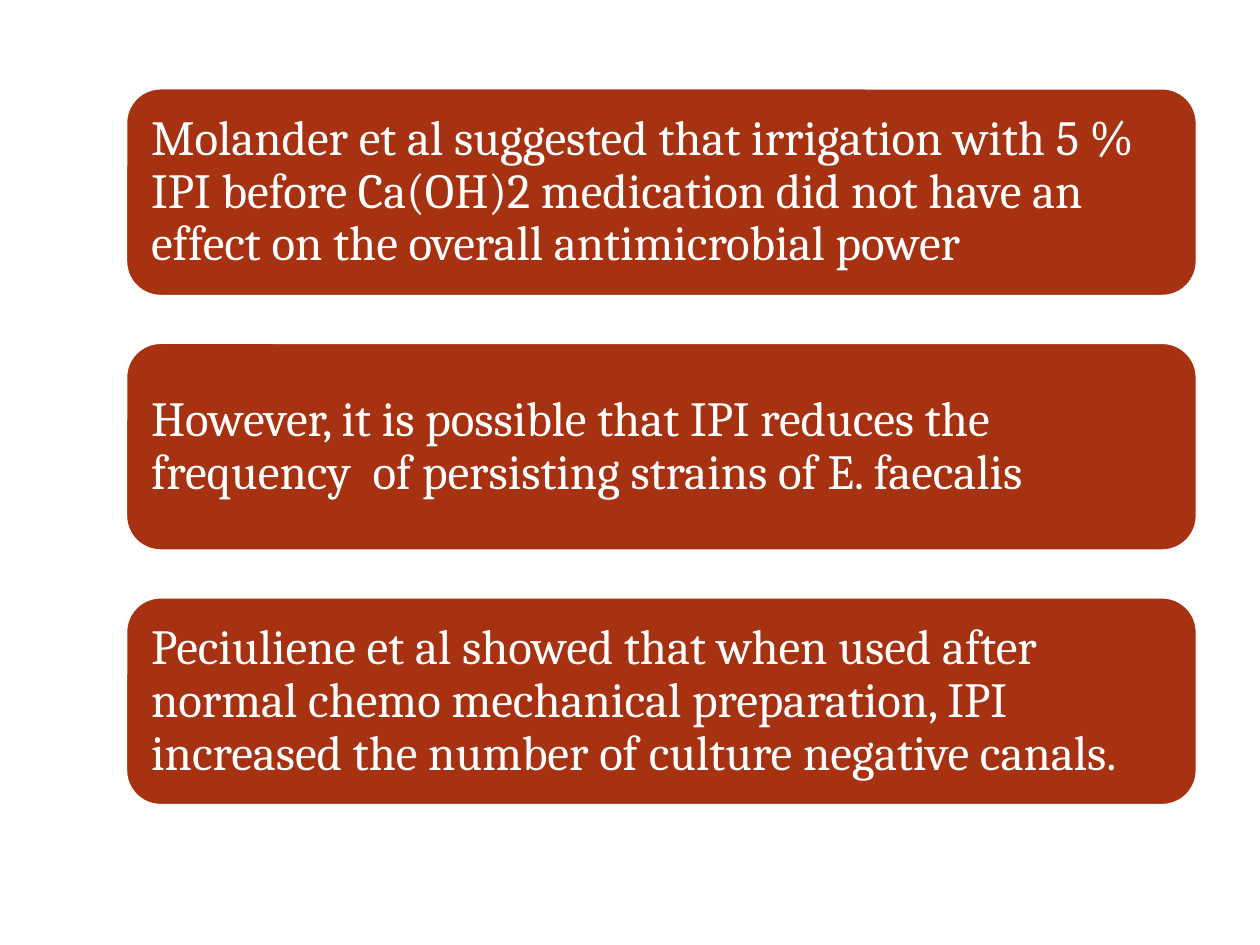
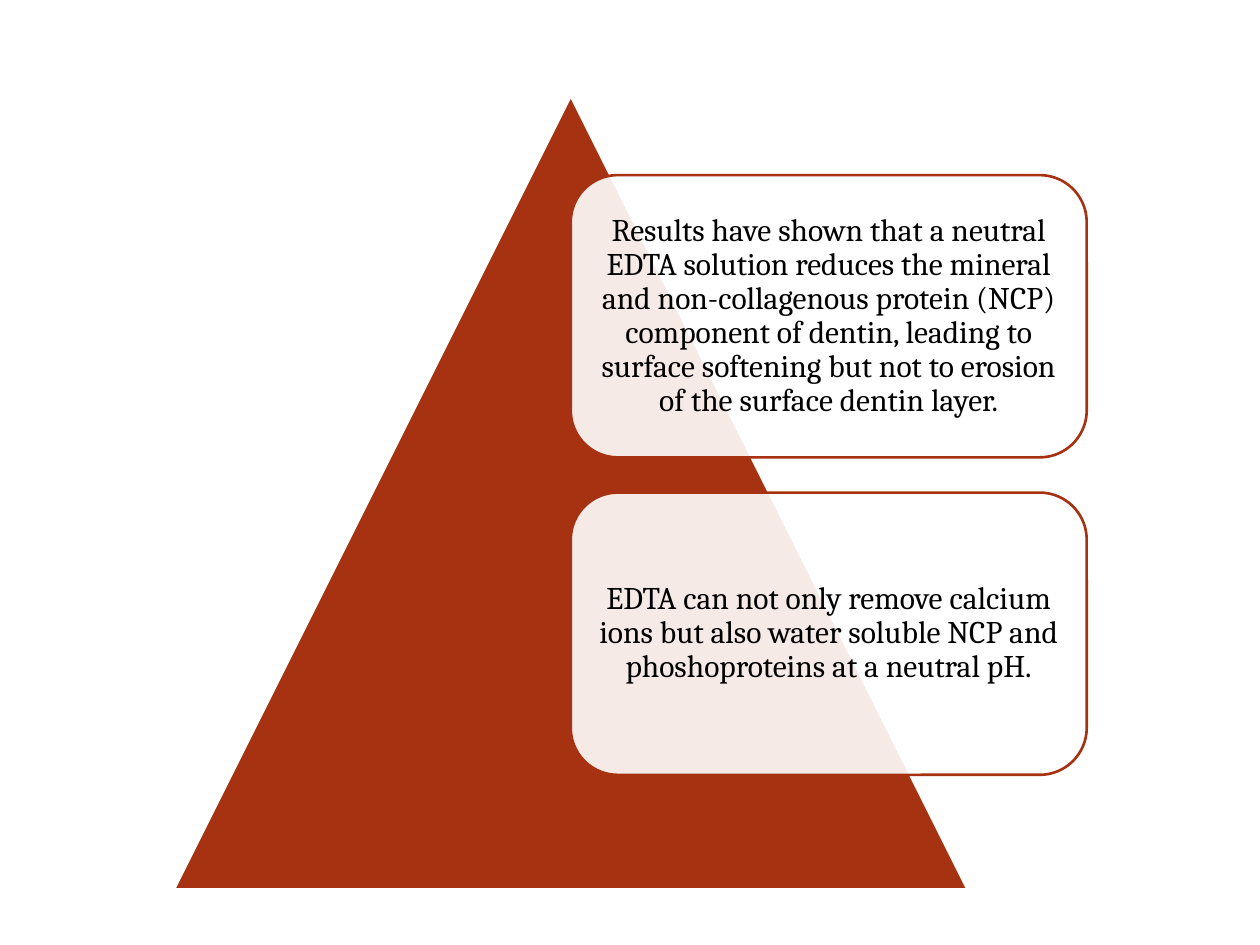
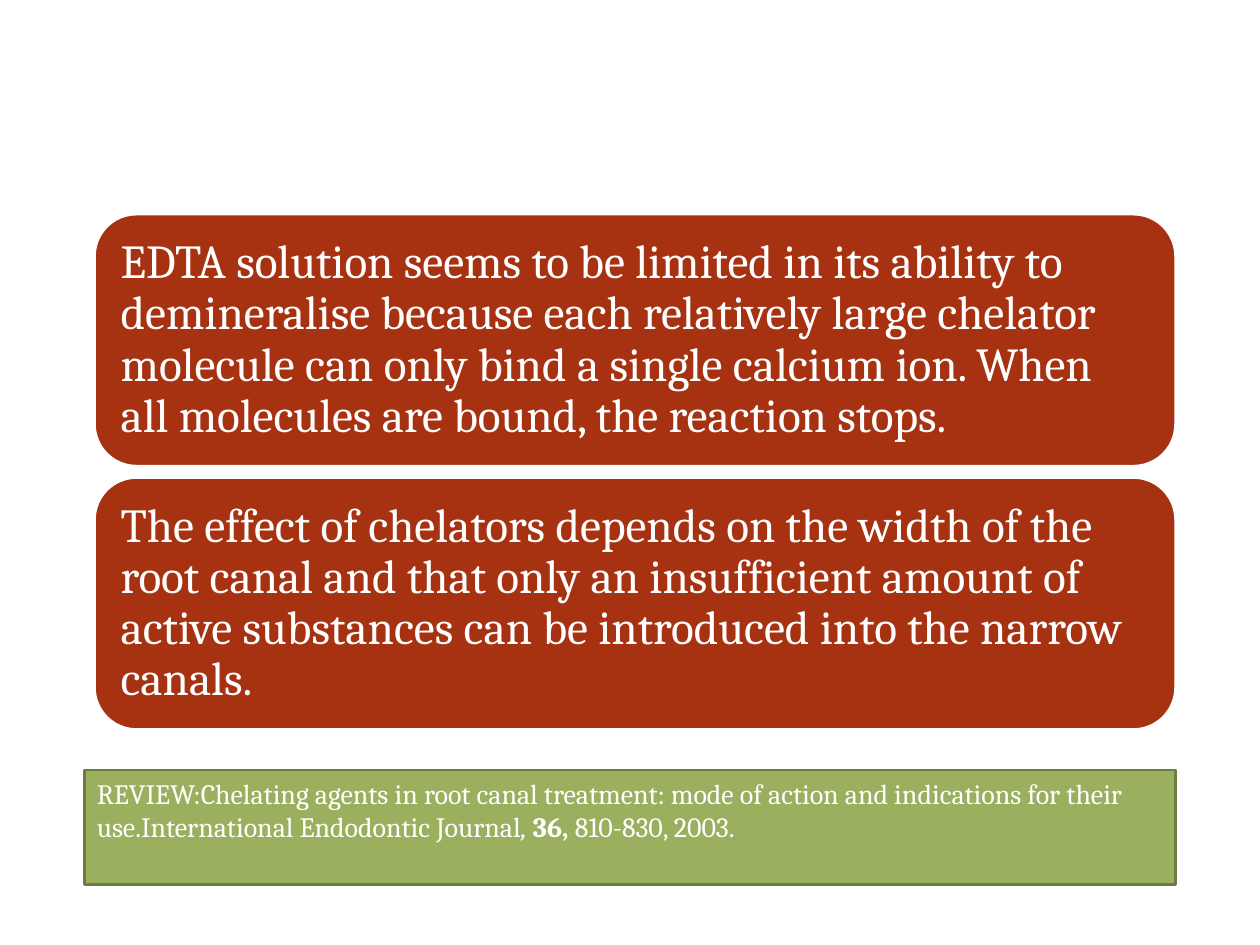
from lxml import etree
from pptx import Presentation
from pptx.dml.color import RGBColor
from pptx.enum import shapes, text
from pptx.oxml import ns
from pptx.util import Inches, Pt

FONT = "Cambria"
RUST, WHITE, BLACK = "A63212", "FFFFFF", "000000"
GREEN, DARK_GREEN = "9BB05E", "6E7C43"
PRESET = shapes.MSO_SHAPE

IODINE_FINDINGS = [
    "Molander et al suggested that irrigation with 5 % IPI before Ca(OH)2 medication "
    "did not have an effect on the overall antimicrobial power",
    "However, it is possible that IPI reduces the frequency  of persisting strains of E. faecalis",
    "Peciuliene et al showed that when used after normal chemo mechanical preparation, "
    "IPI increased the number of culture negative canals.",
]
EDTA_EFFECTS = [
    "Results have shown that a neutral EDTA solution reduces the mineral and non-collagenous "
    "protein (NCP) component of dentin, leading to surface softening but not to erosion of the "
    "surface dentin layer.",
    "EDTA can not only remove calcium ions but also water soluble NCP and phoshoproteins "
    "at a neutral pH.",
]
EDTA_LIMITS = [
    "EDTA solution seems to be limited in its ability to demineralise because each relatively "
    "large chelator molecule can only bind a single calcium ion. When all molecules are bound, "
    "the reaction stops.",
    "The effect of chelators depends on the width of the root canal and that only an "
    "insufficient amount of active substances can be introduced into the narrow canals.",
]
CITATION = [
    ("REVIEW:Chelating agents in root canal treatment: mode of action and indications for "
     "their use.International Endodontic Journal", False, False),
    (",", False, True),
    (" 36,", True, False),
    (" 810-830, 2003.", False, False),
]


def color(hex_code):
    """Turn a hex string into a colour."""
    return RGBColor.from_string(hex_code)


def add_panel(slide, preset, box, fill, line):
    """Add a filled, outlined preset shape in box (left, top, width, height)."""
    panel = slide.shapes.add_shape(preset, *map(Inches, box))
    panel.shadow.inherit = False
    panel.fill.solid()
    panel.fill.fore_color.rgb = color(fill)
    panel.line.color.rgb = color(line)
    panel.line.width = Pt(1.5)
    return panel


def set_opacity(panel, percent):
    """Make the solid fill of a panel partly transparent."""
    fill_color = panel.fill._xPr.find(ns.qn("a:solidFill"))[0]
    etree.SubElement(fill_color, ns.qn("a:alpha"), val=str(percent * 1000))


def style_paragraph(paragraph, size, font_color, align=text.PP_ALIGN.LEFT):
    """Apply the shared font and the given size, colour and alignment."""
    paragraph.alignment = align
    paragraph.font.name = FONT
    paragraph.font.size = Pt(size)
    paragraph.font.color.rgb = color(font_color)


def write_card(card, statement, size, font_color, inset, align):
    """Write one vertically centred statement into a card."""
    frame = card.text_frame
    frame.word_wrap = True
    frame.vertical_anchor = text.MSO_ANCHOR.MIDDLE
    frame.margin_left = frame.margin_right = Inches(inset)
    frame.margin_top = frame.margin_bottom = Inches(inset)
    paragraph = frame.paragraphs[0]
    paragraph.text = statement
    paragraph.line_spacing = 0.9
    style_paragraph(paragraph, size, font_color, align)


def add_cards(slide, box, statements, gap, size, inset, fill=WHITE, line=RUST,
              font_color=BLACK, opacity=100, align=text.PP_ALIGN.LEFT):
    """Stack equal rounded cards with a fixed gap to fill box."""
    left, top, width, height = box
    card_height = (height + gap) / len(statements) - gap
    for row, statement in enumerate(statements):
        card_top = top + row * (card_height + gap)
        card = add_panel(slide, PRESET.ROUNDED_RECTANGLE,
                         (left, card_top, width, card_height), fill, line)
        if opacity < 100:
            set_opacity(card, opacity)
        write_card(card, statement, size, font_color, inset, align)


def add_rust_cards(slide, box, statements, gap, size, inset):
    """Stack rust cards with white, left-aligned statements."""
    add_cards(slide, box, statements, gap, size, inset,
              fill=RUST, line=WHITE, font_color=WHITE)


def add_pyramid(slide, box, statements):
    """Draw a pyramid with translucent cards starting at its centre line."""
    left, top, width, height = box
    add_panel(slide, PRESET.ISOSCELES_TRIANGLE, box, RUST, WHITE)
    cards_box = (left + width / 2, top + 0.1 * height, 0.65 * width, 4.76)
    add_cards(slide, cards_box, statements, gap=0.28, size=18, inset=0.07,
              opacity=90, align=text.PP_ALIGN.CENTER)


def add_citation(slide, box, pieces):
    """Add the green source banner with its mixed run styles."""
    banner = add_panel(slide, PRESET.RECTANGLE, box, GREEN, DARK_GREEN)
    frame = banner.text_frame
    frame.word_wrap = True
    frame.vertical_anchor = text.MSO_ANCHOR.TOP
    paragraph = frame.paragraphs[0]
    for words, bold, italic in pieces:
        run = paragraph.add_run()
        run.text = words
        run.font.bold = bold
        run.font.italic = italic
    style_paragraph(paragraph, 16, WHITE)


def main():
    """Build the three slides and save them."""
    deck = Presentation()
    deck.slide_width, deck.slide_height = Inches(10), Inches(7.5)
    blank = deck.slide_layouts[6]
    iodine, effects, limits = (deck.slides.add_slide(blank) for _ in range(3))

    add_rust_cards(iodine, (1, 0.7, 8.5, 5.69), IODINE_FINDINGS, gap=0.37, size=28, inset=0.12)
    add_pyramid(effects, (1.38, 0.76, 6.3, 6.3), EDTA_EFFECTS)
    add_rust_cards(limits, (0.75, 1.7, 8.58, 4.09), EDTA_LIMITS, gap=0.09, size=27, inset=0.11)
    add_citation(limits, (0.67, 6.11, 8.66, 0.91), CITATION)
    deck.save("out.pptx")


if __name__ == "__main__":
    main()
